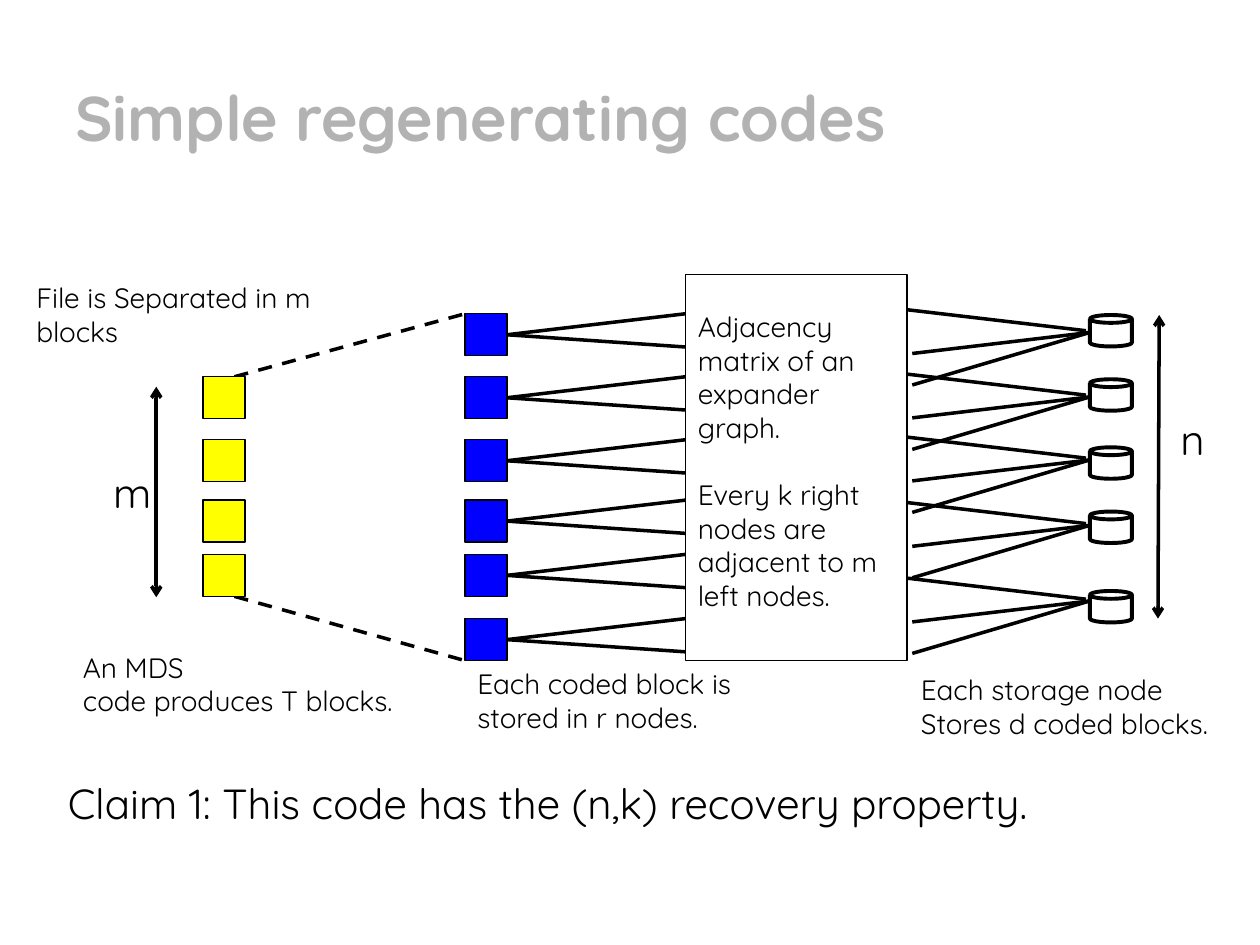
from dataclasses import dataclass

import lxml.etree
import pptx
import pptx.dml.color
import pptx.enum.dml
import pptx.enum.shapes
import pptx.enum.text
import pptx.oxml.ns
import pptx.util

Pt = pptx.util.Pt
Kind = pptx.enum.shapes.MSO_SHAPE
Dash = pptx.enum.dml.MSO_LINE
Anchor = pptx.enum.text.MSO_ANCHOR

BLACK, BLUE, YELLOW, WHITE, GRAY = "000000", "0000FF", "FFFF00", "FFFFFF", "B2B2B2"
SIDE = 24
RIGHT = 3


@dataclass
class Label:
    left: float
    top: float
    width: float
    height: float
    lines: list[str]
    size: float = 16
    color: str = BLACK
    bold: bool = False
    gap: float = 0
    anchor: Anchor = Anchor.TOP


@dataclass
class Line:
    start: tuple[float, float]
    end: tuple[float, float]
    dashed: bool = False
    arrows: bool = False


@dataclass
class Form:
    kind: Kind
    left: float
    top: float
    width: float
    height: float
    fill: str | None = None
    weight: float = 0.75


def tint(code: str) -> pptx.dml.color.RGBColor:
    return pptx.dml.color.RGBColor.from_string(code)


def apply(target, values: dict) -> None:
    for name, value in values.items():
        setattr(target, name, value)


def draw_form(slide, form: Form):
    shape = slide.shapes.add_shape(
        form.kind, Pt(form.left), Pt(form.top), Pt(form.width), Pt(form.height)
    )
    shape.shadow.inherit = False
    if form.fill:
        shape.fill.solid()
        shape.fill.fore_color.rgb = tint(form.fill)
    else:
        shape.fill.background()
    shape.line.color.rgb = tint(BLACK)
    shape.line.width = Pt(form.weight)
    return shape


def draw_line(slide, line: Line):
    link = slide.shapes.add_connector(
        pptx.enum.shapes.MSO_CONNECTOR.STRAIGHT, *map(Pt, line.start + line.end)
    )
    link.line.color.rgb = tint(BLACK)
    link.line.width = Pt(2)
    if line.dashed:
        link.line.dash_style = Dash.DASH
    if line.arrows:
        for tag in ("a:headEnd", "a:tailEnd"):
            tip = lxml.etree.SubElement(link.line._ln, pptx.oxml.ns.qn(tag))
            tip.set("type", "arrow")
    lxml.etree.SubElement(link._element.spPr, pptx.oxml.ns.qn("a:effectLst"))
    return link


def draw_label(slide, label: Label) -> None:
    box = slide.shapes.add_textbox(
        Pt(label.left), Pt(label.top), Pt(label.width), Pt(label.height)
    )
    frame = box.text_frame
    apply(frame, {"word_wrap": True, "vertical_anchor": label.anchor})
    face = {"name": "Quicksand", "size": Pt(label.size), "bold": label.bold}
    for index, words in enumerate(label.lines):
        para = frame.add_paragraph() if index else frame.paragraphs[0]
        if index and label.gap:
            para.space_before = Pt(label.gap)
        run = para.add_run()
        run.text = words
        apply(run.font, face)
        run.font.color.rgb = tint(label.color)


ROWS = [179.3, 215.3, 251.3, 285.8, 316.8, 353.5]
CANS = [(180, 190), (216.7, 226.8), (255.6, 262.8), (292.3, 300.2), (337.7, 343.4)]
BLUE_X, FILE_X, BOX_X, CAN_X = 265.7, 116, 391.7, 622.8
BOX_WIDTH = 126.7

LINES = [
    Line((134, ROWS[1]), (BLUE_X, ROWS[0]), dashed=True),
    Line((134, ROWS[4] + SIDE), (BLUE_X, ROWS[5] + SIDE), dashed=True),
    Line((89.3, 221), (89.3, 341.3), arrows=True),
    Line((662.4, 180), (661.7, 353.5), arrows=True),
]

LABELS = [
    Label(13.7, 157, 180, 46, ["File is Separated in m blocks"]),
    Label(40.3, 368, 198, 46, ["An MDS", "code produces T blocks."]),
    Label(BLUE_X, 377.3, 198, 46, ["Each coded block is stored in r nodes."]),
    Label(519.1, 380.9, 185.8, 46, ["Each storage node", "Stores d coded blocks."]),
    Label(57.6, 262.8, 33, 29, ["m"], 24),
    Label(667.4, 232.6, 33, 29, ["n"], 24),
    Label(36, 21.6, 648, 90, ["Simple regenerating codes"], 36, GRAY, True,
          anchor=Anchor.MIDDLE),
    Label(BOX_X, 173.5, 123, 181.4,
          ["Adjacency matrix of an expander graph.",
           "Every k right nodes are adjacent to m left nodes."], gap=19.2),
    Label(31.7, 440.6, 637, 36, ["Claim 1: This code has the (n,k) recovery property."], 24),
]


def main() -> None:
    deck = pptx.Presentation()
    apply(deck, {"slide_width": Pt(720), "slide_height": Pt(540)})
    slide = deck.slides.add_slide(deck.slide_layouts[6])

    for line in LINES:
        draw_line(slide, line)
    for top in ROWS[1:5]:
        draw_form(slide, Form(Kind.RECTANGLE, FILE_X, top, SIDE, SIDE, YELLOW))
    for top, hub in CANS:
        for x, rise, end, lift in ((521.3, 12, CAN_X, 0), (521.3, 30, CAN_X, 0),
                                   (518.4, -13, 620.6, -1)):
            draw_line(slide, Line((x, hub + rise), (end, hub + lift)))
        draw_form(slide, Form(Kind.CAN, CAN_X, top, SIDE, 18, weight=2.25))
    draw_form(slide, Form(Kind.RECTANGLE, BOX_X, 157, BOX_WIDTH, 220.3, WHITE))
    for top in ROWS:
        block = draw_form(slide, Form(Kind.RECTANGLE, BLUE_X, top, SIDE, SIDE, BLUE))
        mid = top + SIDE / 2
        for rise in (-12, 7):
            link = draw_line(slide, Line((BLUE_X + SIDE, mid), (BOX_X, mid + rise)))
            link.begin_connect(block, RIGHT)
    for label in LABELS:
        draw_label(slide, label)

    deck.save("out.pptx")


if __name__ == "__main__":
    main()
